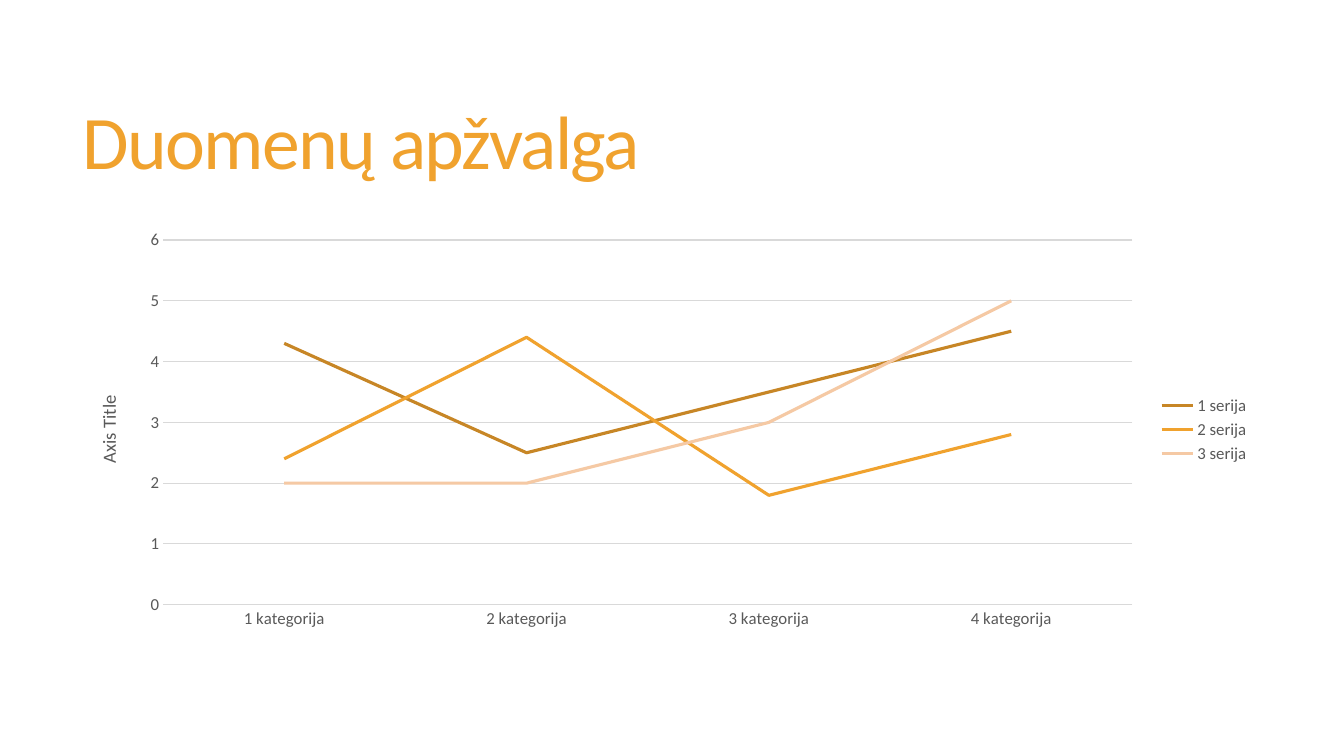
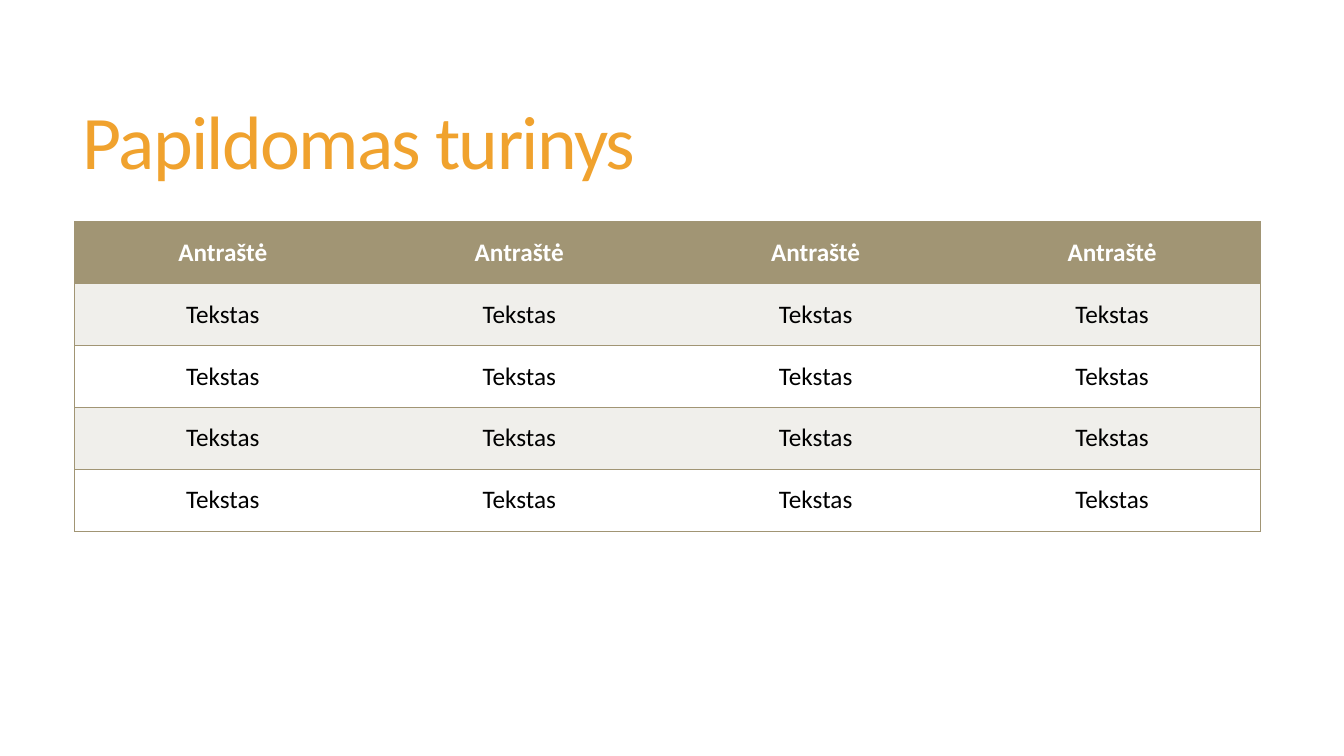
from lxml import etree
from pptx import Presentation
from pptx.chart.data import CategoryChartData
from pptx.dml.color import RGBColor
from pptx.enum.chart import XL_CHART_TYPE, XL_LEGEND_POSITION, XL_TICK_MARK
from pptx.enum.text import MSO_ANCHOR, MSO_AUTO_SIZE, PP_ALIGN
from pptx.oxml.ns import qn
from pptx.util import Pt

LINE = XL_CHART_TYPE.LINE
RIGHT = XL_LEGEND_POSITION.RIGHT
NO_TICK = XL_TICK_MARK.NONE
MIDDLE = MSO_ANCHOR.MIDDLE
NO_FIT = MSO_AUTO_SIZE.NONE
LEFT = PP_ALIGN.LEFT
CENTER = PP_ALIGN.CENTER

WHITE = RGBColor(0xFF, 0xFF, 0xFF)
BLACK = RGBColor(0x00, 0x00, 0x00)
GOLD = RGBColor(0xF0, 0xA2, 0x2E)
BROWN = RGBColor(0xC7, 0x86, 0x26)
PEACH = RGBColor(0xF5, 0xC9, 0xA4)
GRAY = RGBColor(0x59, 0x59, 0x59)
RULE = RGBColor(0xD9, 0xD9, 0xD9)
OLIVE = RGBColor(0xA1, 0x95, 0x74)
BAND = RGBColor(0xF0, 0xEF, 0xEB)

FACE = "Calibri"
SCALE = 9144


def px(*nums):
    return [num * SCALE for num in nums]


def style(font, size, color, bold=False):
    font.name = FACE
    font.size = Pt(size)
    font.bold = bold
    font.color.rgb = color


def put(frame, text, size=18, color=BLACK, bold=False, align=None,
        lead=None, track=None):
    para = frame.paragraphs[0]
    para.alignment = align
    para.line_spacing = lead
    run = para.add_run()
    run.text = text
    style(run.font, size, color, bold)
    if track is not None:
        run.font._element.set("spc", str(round(track * 100)))


def stroke(line, color, width):
    line.color.rgb = color
    line.width = Pt(width)


def edge(cell, side, color=None):
    props = cell._tc.get_or_add_tcPr()
    line = etree.SubElement(props, qn(f"a:ln{side}"), w=str(Pt(1)))
    if color is None:
        etree.SubElement(line, qn("a:noFill"))
    else:
        fill = etree.SubElement(line, qn("a:solidFill"))
        etree.SubElement(fill, qn("a:srgbClr"), val=str(color))


class Deck:
    head = (72, 55, 1178, 181)

    def __init__(self):
        self.file = Presentation()
        self.file.slide_width, self.file.slide_height = px(1333, 750)
        self.slide = None

    def page(self, text):
        self.slide = self.file.slides.add_slide(self.file.slide_layouts[5])
        title = self.slide.shapes.title
        title.left, title.top, title.width, title.height = px(*self.head)
        frame = title.text_frame
        frame.word_wrap = True
        frame.auto_size = NO_FIT
        frame.vertical_anchor = MIDDLE
        put(frame, text, size=54, color=GOLD, align=LEFT, lead=0.85, track=-1.2)

    def chart(self, box, cats, rows, label):
        data = CategoryChartData()
        data.categories = cats
        for name, vals, _ in rows:
            data.add_series(name, vals)
        chart = self.slide.shapes.add_chart(LINE, *px(*box), data).chart
        chart.has_title = False
        style(chart.font, 10, BLACK)
        chart.has_legend = True
        chart.legend.position = RIGHT
        chart.legend.include_in_layout = False
        style(chart.legend.font, 12, GRAY)
        plot = chart.plots[0]
        plot.vary_by_categories = False
        for series, (_, _, color) in zip(plot.series, rows):
            series.smooth = False
            stroke(series.format.line, color, 2.25)
        base, value = chart.category_axis, chart.value_axis
        for axis in (base, value):
            axis.major_tick_mark = axis.minor_tick_mark = NO_TICK
            style(axis.tick_labels.font, 12, GRAY)
        stroke(base.format.line, RULE, 0.75)
        value.format.line.fill.background()
        value.minimum_scale, value.maximum_scale, value.major_unit = 0, 6, 1
        value.has_major_gridlines = True
        stroke(value.major_gridlines.format.line, RULE, 0.75)
        frame = value.axis_title.text_frame
        put(frame, label, size=13.3, color=GRAY)
        frame._txBody.bodyPr.set("rot", "-5400000")

    def table(self, box, rows):
        count, wide = len(rows), len(rows[0])
        table = self.slide.shapes.add_table(count, wide, *px(*box)).table
        for r, row in enumerate(rows):
            head = r == 0
            fill = OLIVE if head else BAND if r % 2 else WHITE
            for c, text in enumerate(row):
                cell = table.cell(r, c)
                cell.vertical_anchor = MIDDLE
                put(cell.text_frame, text, color=WHITE if head else BLACK,
                    bold=head, align=CENTER)
                edge(cell, "L", OLIVE if c == 0 else None)
                edge(cell, "R", OLIVE if c == wide - 1 else None)
                edge(cell, "T", OLIVE)
                edge(cell, "B", OLIVE)
                cell.fill.solid()
                cell.fill.fore_color.rgb = fill


def main():
    deck = Deck()
    deck.page("Duomenų apžvalga")
    deck.chart(
        (74, 220, 1176, 412),
        [f"{num} kategorija" for num in range(1, 5)],
        [
            ("1 serija", (4.3, 2.5, 3.5, 4.5), BROWN),
            ("2 serija", (2.4, 4.4, 1.8, 2.8), GOLD),
            ("3 serija", (2, 2, 3, 5), PEACH),
        ],
        "Axis Title",
    )
    deck.page("Papildomas turinys")
    deck.table((74, 220, 1176, 307), [["Antraštė"] * 4] + [["Tekstas"] * 4] * 4)
    deck.file.save("out.pptx")


if __name__ == "__main__":
    main()
